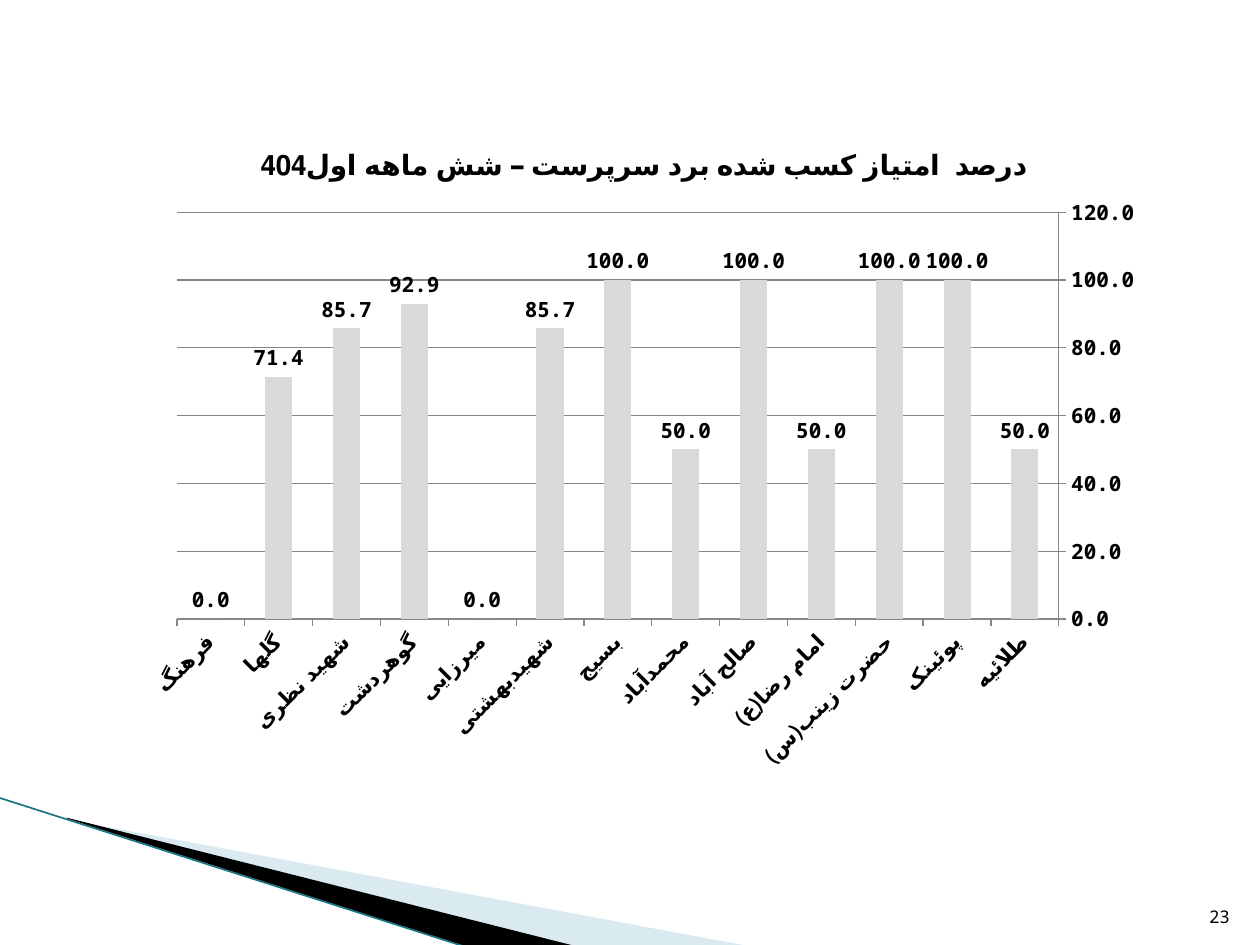
from lxml import etree
from pptx import Presentation
from pptx.chart.data import CategoryChartData
from pptx.dml.color import RGBColor
from pptx.enum import chart as ch, shapes, text
from pptx.oxml import parse_xml
from pptx.oxml.ns import nsdecls, qn
from pptx.util import Pt

FONT = "Noto Sans Mono"
BLACK = RGBColor(0x00, 0x00, 0x00)
PALE_BLUE = RGBColor(0xA0, 0xCB, 0xDC)
EDGE_TEAL = RGBColor(0x1B, 0x75, 0x87)
BAR_GRAY = RGBColor(0xD9, 0xD9, 0xD9)
AXIS_GRAY = RGBColor(0x86, 0x86, 0x86)

TITLE = "درصد  امتیاز کسب شده برد سرپرست – شش ماهه اول404"
SCORES = [
    ("طلائیه", 50), ("پوئینک", 100), ("حضرت زینب(س)", 100),
    ("امام رضا(ع)", 50), ("صالح آباد", 100), ("محمدآباد", 50),
    ("بسیج", 100), ("شهیدبهشتی", 85.7), ("میرزایی", 0),
    ("گوهردشت", 92.9), ("شهید نظری", 85.7), ("گلها", 71.4), ("فرهنگ", 0),
]


def set_font(font, size, bold=False):
    font.name, font.size, font.bold = FONT, Pt(size), bold
    font.color.rgb = BLACK


def add_text(slide, words, left, top, width, height, size=10, bold=False):
    """Right-to-left text, set against the bottom right of its box."""
    tf = slide.shapes.add_textbox(Pt(left), Pt(top), Pt(width), Pt(height)).text_frame
    tf.word_wrap = True
    tf.vertical_anchor = text.MSO_ANCHOR.BOTTOM
    p = tf.paragraphs[0]
    p.alignment = text.PP_ALIGN.RIGHT
    p._p.get_or_add_pPr().set("rtl", "1")
    r = p.add_run()
    r.text = words
    set_font(r.font, size, bold)
    for script in ("a:ea", "a:cs"):
        etree.SubElement(r._r.rPr, qn(script)).set("typeface", FONT)


def add_wedge(slide, points, color, alpha=None):
    """Filled polygon; alpha is the opacity in percent."""
    start, *rest = [(Pt(x), Pt(y)) for x, y in points]
    builder = slide.shapes.build_freeform(*start)
    builder.add_line_segments(rest, close=True)
    sp = builder.convert_to_shape()
    sp.shadow.inherit = False
    sp.fill.solid()
    sp.fill.fore_color.rgb = color
    sp.line.fill.background()
    if alpha is not None:
        clr = sp._element.spPr.find(".//" + qn("a:srgbClr"))
        etree.SubElement(clr, qn("a:alpha")).set("val", str(alpha * 1000))


def add_line(slide, x1, y1, x2, y2, color, width):
    line = slide.shapes.add_connector(
        shapes.MSO_CONNECTOR.STRAIGHT, Pt(x1), Pt(y1), Pt(x2), Pt(y2))
    line.line.color.rgb = color
    line.line.width = Pt(width)
    etree.SubElement(line._element.spPr, qn("a:effectLst"))


def place_plot(frame, left, top, width, height):
    """Fix the inner plot area, in points from the corner of the chart."""
    area = frame.chart._chartSpace.chart.plotArea
    for old in area.findall(qn("c:layout")):
        area.remove(old)
    parts = {"x": Pt(left) / frame.width, "y": Pt(top) / frame.height,
             "w": Pt(width) / frame.width, "h": Pt(height) / frame.height}
    sizes = "".join(f'<c:{k} val="{v}"/>' for k, v in parts.items())
    area.insert(0, parse_xml(
        f'<c:layout {nsdecls("c")}><c:manualLayout><c:layoutTarget val="inner"/>'
        f'<c:xMode val="edge"/><c:yMode val="edge"/>{sizes}'
        '</c:manualLayout></c:layout>'))


def style_axis(axis):
    axis.major_tick_mark = ch.XL_TICK_MARK.OUTSIDE
    axis.minor_tick_mark = ch.XL_TICK_MARK.NONE
    axis.format.line.color.rgb = AXIS_GRAY
    set_font(axis.tick_labels.font, 12, True)


def add_score_chart(slide, left, top, width, height):
    data = CategoryChartData(number_format="0.0")
    names, values = zip(*SCORES)
    data.categories = names
    data.add_series("Series 1", values)
    frame = slide.shapes.add_chart(
        ch.XL_CHART_TYPE.COLUMN_CLUSTERED,
        Pt(left), Pt(top), Pt(width), Pt(height), data)
    chart = frame.chart
    set_font(chart.font, 18)
    chart.has_legend = False

    chart.has_title = True
    p = chart.chart_title.text_frame.paragraphs[0]
    p._p.get_or_add_pPr().set("rtl", "1")
    r = p.add_run()
    r.text = TITLE
    set_font(r.font, 16, True)
    chart.chart_title.include_in_layout = False

    style_axis(chart.category_axis)
    chart.category_axis.reverse_order = True
    val = chart.value_axis
    style_axis(val)
    val.minimum_scale, val.maximum_scale, val.major_unit = 0, 120, 20
    val.has_major_gridlines = True
    val.major_gridlines.format.line.color.rgb = AXIS_GRAY
    val.tick_labels.number_format = "0.0"
    val.tick_labels.number_format_is_linked = False

    plot = chart.plots[0]
    plot.gap_width = 150
    plot.vary_by_categories = False
    fill = plot.series[0].format.fill
    fill.solid()
    fill.fore_color.rgb = BAR_GRAY
    labels = plot.series[0].data_labels
    labels.show_value = True
    labels.number_format = "0.0"
    labels.number_format_is_linked = False
    labels.position = ch.XL_LABEL_POSITION.OUTSIDE_END
    set_font(labels.font, 12, True)
    place_plot(frame, 24.8, 50, 504, 232.5)


def main():
    prs = Presentation()
    prs.slide_width, prs.slide_height = Pt(720), Pt(540)
    slide = prs.slides.add_slide(prs.slide_layouts[6])
    add_wedge(slide, [(39.6, 468.5), (428.4, 540.7), (328.3, 540.7), (39.6, 468)],
              PALE_BLUE, alpha=40)
    add_wedge(slide, [(38.2, 467.3), (329, 540.7), (267.8, 541.4), (38.9, 468)], BLACK)
    add_line(slide, -0.7, 455.8, 267.1, 541.4, EDGE_TEAL, 0.95)
    add_text(slide, "23", 681.1, 504.7, 28.8, 28.8)
    add_score_chart(slide, 76.3, 71.3, 583.9, 374.4)
    prs.save("out.pptx")


if __name__ == "__main__":
    main()
